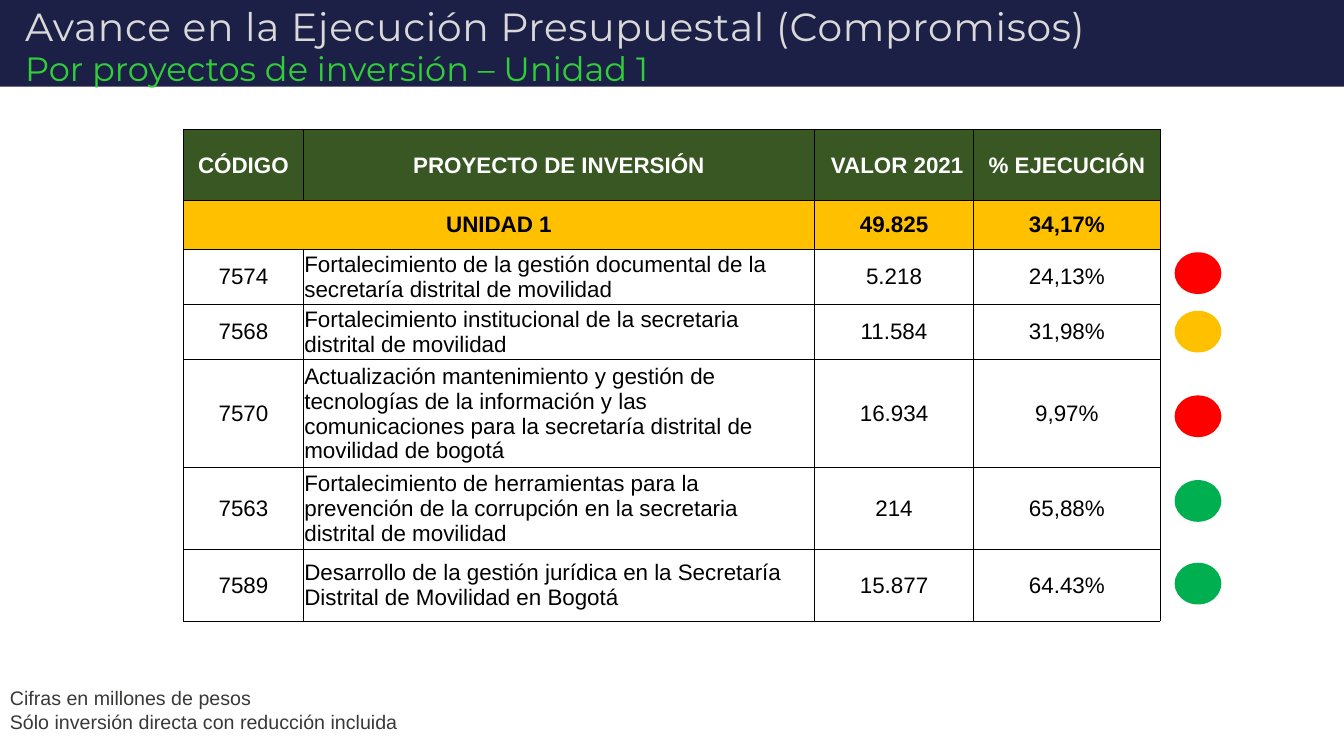
import pptx
import pptx.dml.color
import pptx.enum.shapes
import pptx.enum.text
import pptx.oxml
import pptx.oxml.ns
import pptx.util

Pt = pptx.util.Pt
RGB = pptx.dml.color.RGBColor.from_string
SHAPE = pptx.enum.shapes.MSO_SHAPE
ALIGN = pptx.enum.text.PP_ALIGN
ANCHOR = pptx.enum.text.MSO_ANCHOR

THEME = {
    "band": "1C2046", "title": "D9D9D9", "subtitle": "31CE39", "note": "3B3838",
    "header": "385723", "total": "FFC000", "white": "FFFFFF", "black": "000000",
    "red": "FF0000", "amber": "FFC000", "green": "00B050",
    "title_size": 28, "subtitle_size": 24, "table_size": 16, "note_size": 14,
    "heading_font": "Montserrat", "body_font": "Arial",
}


def add_run(p, text, font, size, color, bold=False):
    r = p.add_run()
    r.text = text
    for name, value in {"name": font, "size": Pt(size), "bold": bold}.items():
        setattr(r.font, name, value)
    r.font.color.rgb = RGB(color)
    return r


def add_filled(s, kind, box, color):
    sp = s.shapes.add_shape(kind, *[Pt(v) for v in box])
    sp.shadow.inherit = False
    sp.fill.solid()
    sp.fill.fore_color.rgb = RGB(color)
    sp.line.color.rgb = RGB(color)
    sp.line.width = Pt(1)
    return sp


prs = pptx.Presentation()
prs.slide_width, prs.slide_height = Pt(960), Pt(540)
s = prs.slides.add_slide(prs.slide_layouts[6])

# Title band
band = add_filled(s, SHAPE.RECTANGLE, (0, 0, 960, 61.92), THEME["band"])
band.line.fill.background()

# Title, subtitle and footnote
heading = {"margin_left": 0, "margin_right": 0, "margin_top": Pt(0.72), "margin_bottom": 0,
           "vertical_anchor": ANCHOR.MIDDLE}
notes = ["Cifras en millones de pesos", "Sólo inversión directa con reducción incluida"]
texts = [
    ((18, 33.12, 911.52, 30.24), ["Por proyectos de inversión – Unidad 1"],
     "heading_font", "subtitle", heading, 1, 0),
    ((18, 4.32, 895.68, 31.68), ["Avance en la Ejecución Presupuestal (Compromisos)"],
     "heading_font", "title", heading, 0.9, 50),
    ((0, 486.72, 500.4, 41.04), notes, "body_font", "note", {}, 1, 0),
]
for box, lines, font, role, frame, spacing, tracking in texts:
    tf = s.shapes.add_textbox(*[Pt(v) for v in box]).text_frame
    tf.word_wrap = True
    tf.auto_size = pptx.enum.text.MSO_AUTO_SIZE.SHAPE_TO_FIT_TEXT
    for name, value in frame.items():
        setattr(tf, name, value)
    for i, line in enumerate(lines):
        p = tf.add_paragraph() if i else tf.paragraphs[0]
        p.line_spacing = spacing
        r = add_run(p, line, THEME[font], THEME[role + "_size"], THEME[role])
        if tracking:
            r.font._element.set("spc", str(tracking))

# Project table
rows = [
    ("CÓDIGO", "PROYECTO DE INVERSIÓN", "VALOR 2021", "% EJECUCIÓN"),
    ("UNIDAD 1", "", "49.825", "34,17%"),
    ("7574", "Fortalecimiento de la gestión documental de la secretaría distrital de movilidad",
     "5.218", "24,13%"),
    ("7568", "Fortalecimiento institucional de la secretaria distrital de movilidad",
     "11.584", "31,98%"),
    ("7570", "Actualización mantenimiento y gestión de tecnologías de la información y las "
     "comunicaciones para la secretaría distrital de movilidad de bogotá", "16.934", "9,97%"),
    ("7563", "Fortalecimiento de herramientas para la prevención de la corrupción en la "
     "secretaria distrital de movilidad", "214", "65,88%"),
    ("7589", "Desarrollo de la gestión jurídica en la Secretaría Distrital de Movilidad en Bogotá",
     "15.877", "64.43%"),
]
col_widths = [85.68, 365.04, 113.76, 133.2]
row_heights = [51.12, 34.56, 39.6, 35.28, 68.4, 51.12, 51.12]
table = s.shapes.add_table(len(rows), len(col_widths), Pt(131.04), Pt(92.16),
                           Pt(sum(col_widths)), Pt(sum(row_heights))).table
for col, width in zip(table.columns, col_widths):
    col.width = Pt(width)
for row, height in zip(table.rows, row_heights):
    row.height = Pt(height)
table.cell(1, 0).merge(table.cell(1, 1))

cell_format = {"margin_left": Pt(0.72), "margin_right": Pt(0.72), "margin_top": Pt(0.72),
               "margin_bottom": 0, "vertical_anchor": ANCHOR.MIDDLE}
row_fills = {0: THEME["header"], 1: THEME["total"]}
border = ('<a:{} xmlns:a="http://schemas.openxmlformats.org/drawingml/2006/main" w="6350">'
          '<a:solidFill><a:srgbClr val="{}"/></a:solidFill></a:{}>')
for i, row in enumerate(rows):
    for j, text in enumerate(row):
        cell = table.cell(i, j)
        for name, value in cell_format.items():
            setattr(cell, name, value)
        # Borders come before the fill in the cell properties
        tcPr = cell._tc.get_or_add_tcPr()
        for side in ("lnL", "lnR", "lnT", "lnB"):
            tcPr.append(pptx.oxml.parse_xml(border.format(side, THEME["black"], side)))
        if i in row_fills:
            cell.fill.solid()
            cell.fill.fore_color.rgb = RGB(row_fills[i])
        else:
            cell.fill.background()
        if text:
            p = cell.text_frame.paragraphs[0]
            p.alignment = ALIGN.LEFT if j == 1 and i > 1 else ALIGN.CENTER
            add_run(p, text, THEME["body_font"], THEME["table_size"],
                    THEME["black" if i else "white"], bold=i < 2)
table.cell(0, 2).margin_left = Pt(5.2)

# Status lights beside the projects
lights = [(180.72, "red"), (222.48, "amber"), (282.96, "red"), (343.44, "green"),
          (402.48, "green")]
for top, status in lights:
    add_filled(s, SHAPE.OVAL, (839.52, top, 32.4, 28.8), THEME[status])

prs.save("out.pptx")
